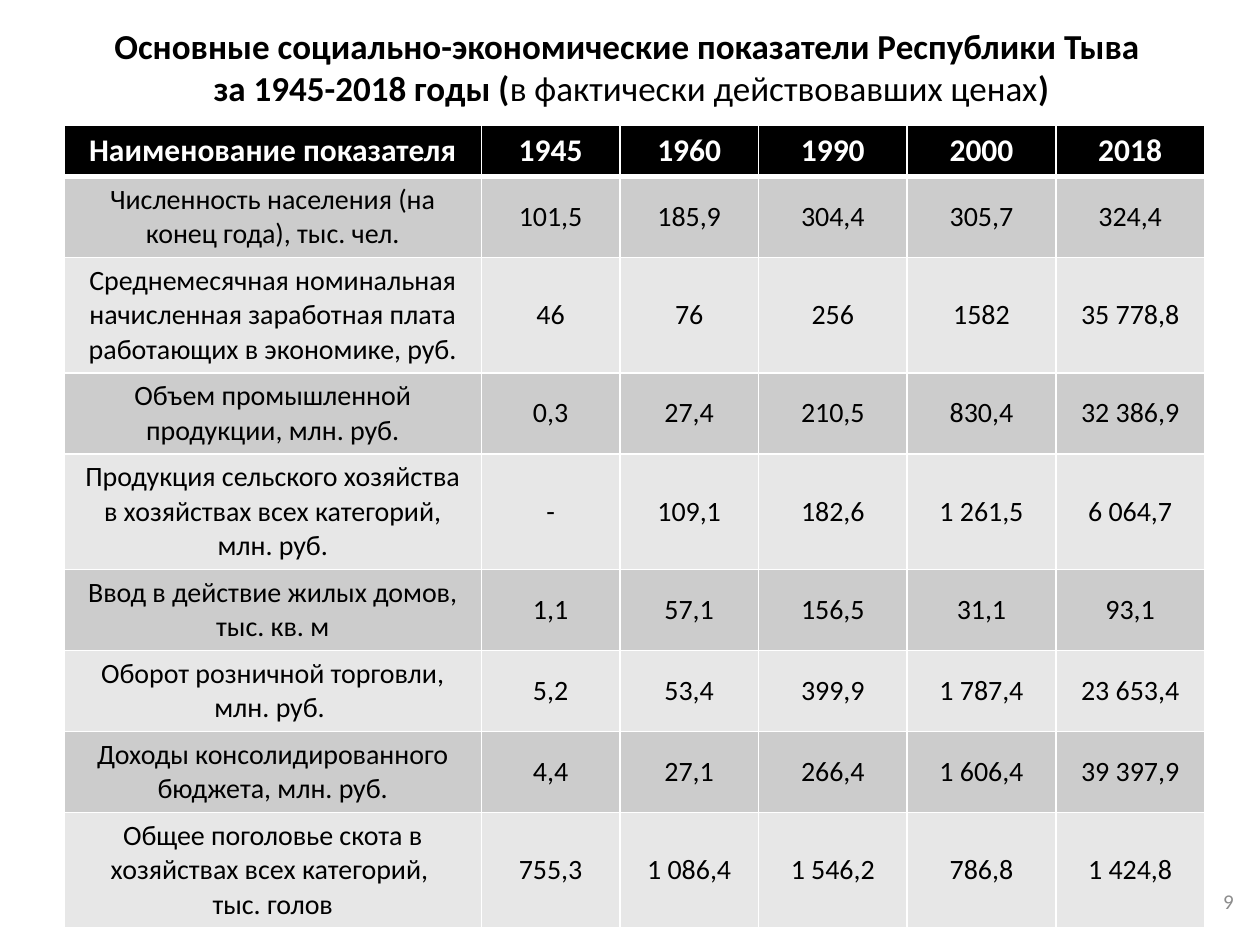
from lxml import etree
from pptx import Presentation
from pptx.dml.color import RGBColor
from pptx.enum.text import MSO_ANCHOR, MSO_AUTO_SIZE, PP_ALIGN
from pptx.oxml.ns import qn
from pptx.util import Inches, Pt

CENTER, RIGHT = PP_ALIGN.CENTER, PP_ALIGN.RIGHT
MIDDLE = MSO_ANCHOR.MIDDLE
NO_AUTOFIT = MSO_AUTO_SIZE.NONE

COLORS = {"text": "000000", "header": "000000", "header_text": "FFFFFF",
          "odd": "CCCCCC", "even": "E7E7E7", "border": "FFFFFF", "number": "8C8C8C"}
FORMATS = {
    "title": {"size": Pt(20), "bold": True, "name": "Calibri"},
    "title_note": {"size": Pt(20), "bold": False, "name": "Calibri"},
    "header": {"size": Pt(18), "bold": True, "name": "Calibri"},
    "body": {"size": Pt(16), "bold": False, "name": "Calibri"},
    "number": {"size": Pt(12), "bold": False, "name": "Calibri"},
}
TITLE_LINES = [
    [("Основные социально-экономические показатели Республики Тыва ", "title")],
    [("за 1945-2018 годы (", "title"),
     ("в фактически действовавших ценах", "title_note"), (")", "title")],
]
COLUMN_WIDTHS = [3.31, 1.1, 1.1, 1.18, 1.18, 1.18]
ROW_HEIGHTS = {1: 0.41, 2: 0.64, 3: 0.91}
HEADER = ["Наименование показателя", "1945", "1960", "1990", "2000", "2018"]
INDICATORS = [
    (2, ["Численность населения (на конец года), тыс. чел.",
         "101,5", "185,9", "304,4", "305,7", "324,4"]),
    (3, ["Среднемесячная номинальная начисленная заработная плата работающих в экономике, руб.",
         "46", "76", "256", "1582", "35 778,8"]),
    (2, ["Объем промышленной продукции, млн. руб.",
         "0,3", "27,4", "210,5", "830,4", "32 386,9"]),
    (3, ["Продукция сельского хозяйства в хозяйствах всех категорий, млн. руб.",
         "-", "109,1", "182,6", "1 261,5", "6 064,7"]),
    (2, ["Ввод в действие жилых домов, тыс. кв. м",
         "1,1", "57,1", "156,5", "31,1", "93,1"]),
    (2, ["Оборот розничной торговли, млн. руб. ",
         "5,2", "53,4", "399,9", "1 787,4", "23 653,4"]),
    (2, ["Доходы консолидированного бюджета, млн. руб.",
         "4,4", "27,1", "266,4", "1 606,4", "39 397,9"]),
    (3, ["Общее поголовье скота в хозяйствах всех категорий, \nтыс. голов",
         "755,3", "1 086,4", "1 546,2", "786,8", "1 424,8"]),
]


def add_span(para, text, style, color="text"):
    """Append a formatted run to a paragraph."""
    span = para.add_run()
    span.text = text
    for name, value in FORMATS[style].items():
        setattr(span.font, name, value)
    span.font.color.rgb = RGBColor.from_string(COLORS[color])


def place_title(shape, box):
    """Move the title placeholder into the box and write its lines."""
    shape.left, shape.top, shape.width, shape.height = map(Inches, box)
    frame = shape.text_frame
    frame.word_wrap, frame.auto_size, frame.vertical_anchor = True, NO_AUTOFIT, MIDDLE
    para = frame.paragraphs[0]
    para.alignment = CENTER
    for index, line in enumerate(TITLE_LINES):
        if index:
            para.add_line_break()
        for text, style in line:
            add_span(para, text, style)


def set_borders(cell, widths):
    """Draw the four cell borders with the given widths in points."""
    properties = cell._tc.get_or_add_tcPr()
    for side, width in zip("LRTB", widths):
        line = etree.SubElement(properties, qn(f"a:ln{side}"), w=str(Pt(width)))
        fill = etree.SubElement(line, qn("a:solidFill"))
        etree.SubElement(fill, qn("a:srgbClr"), val=COLORS["border"])


def fill_cell(cell, text, style, color, background, widths):
    """Write and format one table cell."""
    set_borders(cell, widths)
    cell.fill.solid()
    cell.fill.fore_color.rgb = RGBColor.from_string(COLORS[background])
    cell.vertical_anchor = MIDDLE
    for index, line in enumerate(text.split("\n")):
        frame = cell.text_frame
        para = frame.add_paragraph() if index else frame.paragraphs[0]
        para.alignment = CENTER
        add_span(para, line, style, color)


def add_indicator_table(page, box):
    """Add the table of indicators by year."""
    rows = [(1, HEADER)] + INDICATORS
    table = page.shapes.add_table(len(rows), len(HEADER), *map(Inches, box)).table
    for column, width in zip(table.columns, COLUMN_WIDTHS):
        column.width = Inches(width)
    for index, (lines, texts) in enumerate(rows):
        table.rows[index].height = Inches(ROW_HEIGHTS[lines])
        if index == 0:
            look = ("header", "header_text", "header", (1, 1, 1, 3))
        else:
            look = ("body", "text", "odd" if index % 2 else "even",
                    (1, 1, 3 if index == 1 else 1, 1))
        for column, text in enumerate(texts):
            fill_cell(table.cell(index, column), text, *look)


def add_page_number(page, box):
    """Add the page number at the lower right."""
    frame = page.shapes.add_textbox(*map(Inches, box)).text_frame
    frame.word_wrap, frame.vertical_anchor = True, MIDDLE
    para = frame.paragraphs[0]
    para.alignment = RIGHT
    add_span(para, "9", "number", "number")


def main():
    """Build the deck and save it."""
    deck = Presentation()
    deck.slide_width, deck.slide_height = Inches(10), Inches(7.5)
    page = deck.slides.add_slide(deck.slide_layouts[5])
    place_title(page.shapes.title, (0.51, 0.13, 9, 0.79))
    add_indicator_table(page, (0.51, 0.99, 9.05, 6.34))
    add_page_number(page, (7.17, 6.95, 2.72, 0.4))
    deck.save("out.pptx")


if __name__ == "__main__":
    main()
